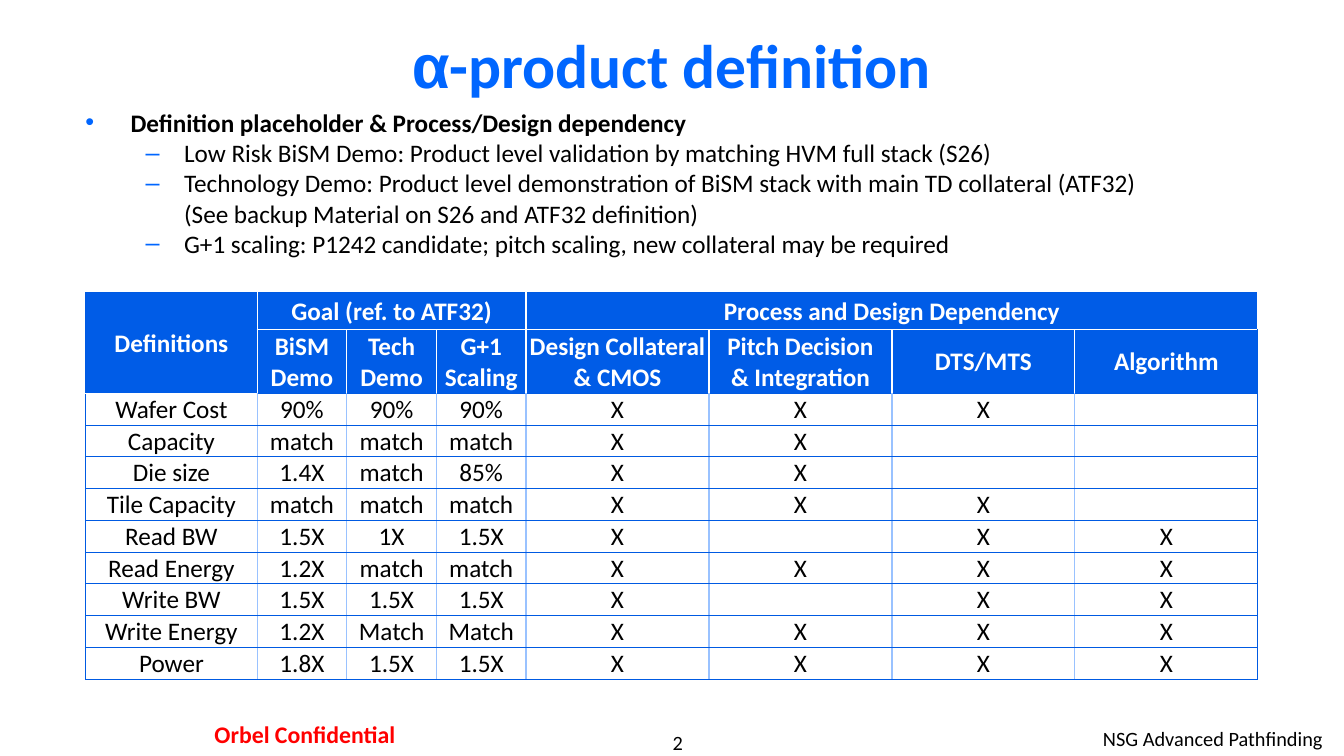
from lxml.etree import SubElement as Sub
from pptx import Presentation
from pptx.dml.color import RGBColor
from pptx.enum.text import MSO_ANCHOR as Anchor, PP_ALIGN as Align
from pptx.oxml.ns import qn
from pptx.util import Cm, Pt

BLUE, HEAD, EDGE, PALE = "0066FF", "005CE7", "005AE2", "99C2FF"
BLACK, WHITE, RED = "000000", "FFFFFF", "FF0000"

POINTS = [
    "Definition placeholder & Process/Design dependency",
    "Low Risk BiSM Demo: Product level validation by matching HVM full stack (S26)",
    "Technology Demo: Product level demonstration of BiSM stack with main TD "
    "collateral (ATF32)\v(See backup Material on S26 and ATF32 definition)",
    "G+1 scaling: P1242 candidate; pitch scaling, new collateral may be required",
]
ROWS = [
    ["Definitions", "Goal (ref. to ATF32)", "", "", "Process and Design Dependency", "", "", ""],
    ["", "BiSM Demo", "Tech Demo", "G+1 Scaling", "Design Collateral & CMOS",
     "Pitch Decision\n& Integration", "DTS/MTS", "Algorithm"],
    ["Wafer Cost", "90%", "90%", "90%", "X", "X", "X", ""],
    ["Capacity", "match", "match", "match", "X", "X", "", ""],
    ["Die size", "1.4X", "match", "85%", "X", "X", "", ""],
    ["Tile Capacity", "match", "match", "match", "X", "X", "X", ""],
    ["Read BW", "1.5X", "1X", "1.5X", "X", "", "X", "X"],
    ["Read Energy", "1.2X", "match", "match", "X", "X", "X", "X"],
    ["Write BW", "1.5X", "1.5X", "1.5X", "X", "", "X", "X"],
    ["Write Energy", "1.2X", "Match", "Match", "X", "X", "X", "X"],
    ["Power", "1.8X", "1.5X", "1.5X", "X", "X", "X", "X"],
]
COLS = [4.32] + [2.26] * 3 + [4.61] * 4
HIGHS = [0.94, 1.6] + [0.8] * 9
MERGES = [(0, 0, 1, 0), (0, 1, 0, 3), (0, 4, 0, 7)]


def tint(text):
    return RGBColor.from_string(text)


def style(par, size, color, bold=False, align=Align.LEFT):
    par.alignment = align
    for run in par.runs:
        font = run.font
        font.name, font.size, font.bold = "Calibri", Pt(size), bold
        font.color.rgb = tint(color)


def frame(slide, box, pad=(0.25, 0.13), anchor=Anchor.TOP):
    """Add an empty text box and return its wrapped text frame."""
    tf = slide.shapes.add_textbox(*map(Cm, box)).text_frame
    tf.word_wrap, tf.vertical_anchor = True, anchor
    tf.margin_left = tf.margin_right = Cm(pad[0])
    tf.margin_top = tf.margin_bottom = Cm(pad[1])
    return tf


def add_title(slide, box):
    par = frame(slide, box, anchor=Anchor.MIDDLE).paragraphs[0]
    for text in ("α", "-product definition"):
        par.add_run().text = text
    style(par, 44, BLUE, True, Align.CENTER)
    par.runs[0].font.name = "Arial"


def set_bullet(par, mark, left, hang):
    props = par._p.get_or_add_pPr()
    props.set("marL", str(Cm(left)))
    props.set("indent", str(-Cm(hang)))
    Sub(Sub(props, qn("a:buClr")), qn("a:srgbClr"), val=BLUE)
    Sub(props, qn("a:buFont"), typeface="Arial")
    Sub(props, qn("a:buChar"), char=mark)


def add_points(slide, box):
    tf = frame(slide, box)
    for i, text in enumerate(POINTS):
        par = tf.add_paragraph() if i else tf.paragraphs[0]
        par.text = text
        if i:
            par.level = 1
            set_bullet(par, "–", 2.49, 0.97)
        else:
            set_bullet(par, "•", 1.14, 1.14)
        style(par, 18, BLACK, bold=i == 0)


def set_edge(cell, side, color, width):
    line = Sub(cell._tc.get_or_add_tcPr(), qn("a:ln" + side), w=str(Pt(width)))
    Sub(Sub(line, qn("a:solidFill")), qn("a:srgbClr"), val=color)


def fill_cell(cell, r, c, text):
    head = r < 2
    rim, rule = (EDGE, 0.75), (WHITE, 1)
    inner = rule if head else (PALE, 1)
    set_edge(cell, "L", *(inner if c else rim))
    set_edge(cell, "R", *(inner if c < len(COLS) - 1 else rim))
    set_edge(cell, "T", *(rule if r == 1 else rim))
    set_edge(cell, "B", *(rule if r == 0 else rim))
    if head:
        cell.fill.solid()
        cell.fill.fore_color.rgb = tint(HEAD)
    else:
        cell.fill.background()
    cell.margin_left = cell.margin_right = cell.margin_top = Cm(0.03)
    cell.margin_bottom = 0
    cell.vertical_anchor = Anchor.MIDDLE
    cell.text_frame.text = text
    for par in cell.text_frame.paragraphs:
        style(par, 18, WHITE if head else BLACK, head, Align.CENTER)


def add_grid(slide, left, top):
    size = map(Cm, (left, top, sum(COLS), sum(HIGHS)))
    table = slide.shapes.add_table(len(ROWS), len(COLS), *size).table
    table.first_row = table.horz_banding = False
    for col, width in zip(table.columns, COLS):
        col.width = Cm(width)
    for row, high in zip(table.rows, HIGHS):
        row.height = Cm(high)
    for r, row in enumerate(ROWS):
        for c, text in enumerate(row):
            fill_cell(table.cell(r, c), r, c, text)
    for r, c, last, end in MERGES:
        table.cell(r, c).merge(table.cell(last, end))


def add_note(slide, box, text, align, size=14.5, color=BLACK, bold=False, pad=(0.25, 0.13)):
    par = frame(slide, box, pad).paragraphs[0]
    par.text = text
    style(par, size, color, bold, align)


def add_footer(slide, left, top):
    add_note(slide, (left + 10.18, top + 0.41, 5.92, 0.61), "2", Align.CENTER, pad=(0, 0))
    add_note(slide, (left + 18.49, top + 0.18, 11.15, 0.89), "NSG Advanced Pathfinding", Align.RIGHT)
    add_note(slide, (left, top, 7.49, 1.04), "Orbel Confidential", Align.CENTER,
             17, RED, True, (0.3, 0.15))


def main():
    deck = Presentation()
    deck.slide_width, deck.slide_height = Cm(33.87), Cm(19.05)
    slide = deck.slides.add_slide(deck.slide_layouts[6])
    add_footer(slide, 3.94, 17.98)
    add_title(slide, (2.54, 0.43, 28.78, 2.34))
    add_points(slide, (1.9, 2.57, 30.05, 4.19))
    add_grid(slide, 2.16, 7.37)
    deck.save("out.pptx")


if __name__ == "__main__":
    main()
